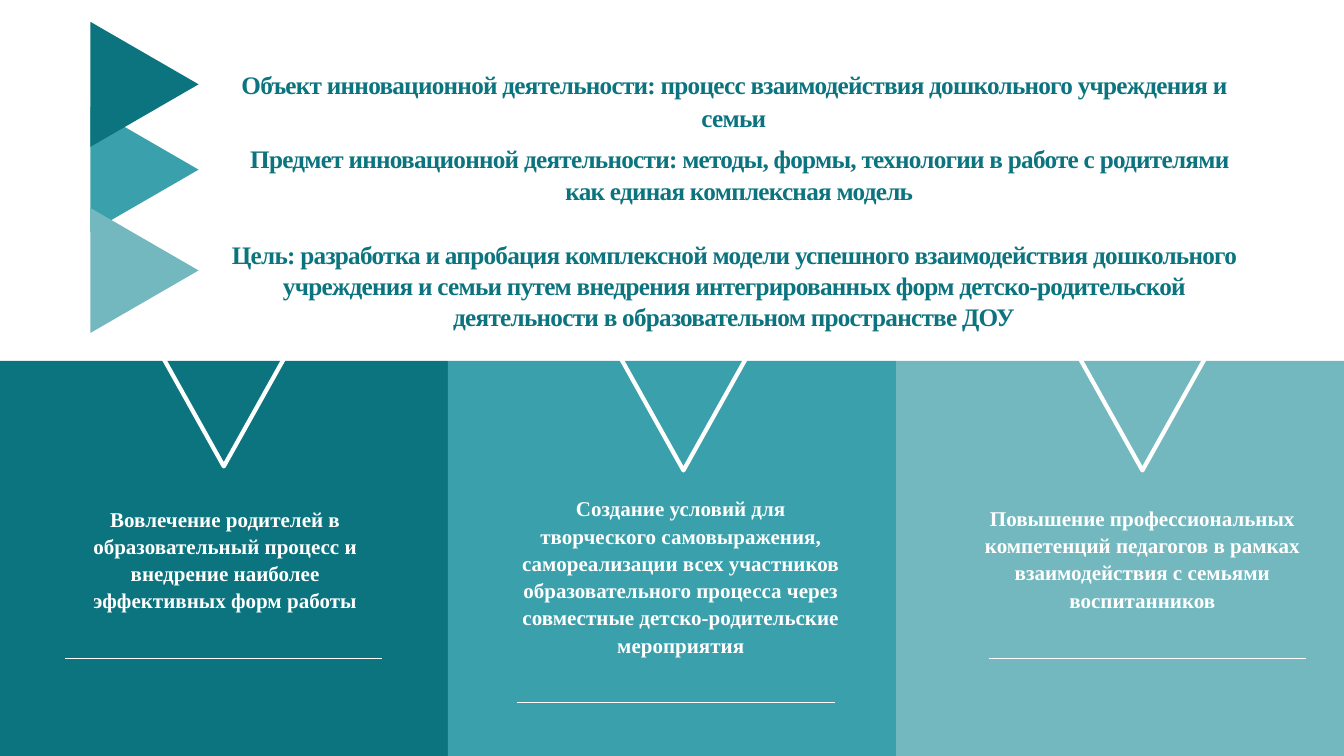
from pptx import Presentation, util as u
from pptx.dml.color import RGBColor
from pptx.enum import shapes, text
from pptx.oxml import parse_xml
from pptx.oxml.ns import nsdecls

W, H = 20, 11.25
DARK, MID, PALE, WHITE = "0B747F", "3AA0AB", "74B8BF", "FFFFFF"
COL = W / 3            # three equal columns
BAND = 5.37            # top of the coloured columns
TEXT_W = 4.72          # width of a task and its rule

# Content: statement, left, top, height, line spacing
STATEMENTS = [
    ("Объект инновационной деятельности: процесс взаимодействия дошкольного "
     "учреждения и семьи", 3.42, 1, 0.98, 35.1),
    ("Предмет инновационной деятельности: методы, формы, технологии в работе "
     "с родителями как единая комплексная модель", 3.5, 2.09, 0.98, 35.1),
    ("Цель: разработка и апробация комплексной модели успешного взаимодействия "
     "дошкольного учреждения и семьи путем внедрения интегрированных форм "
     "детско-родительской деятельности в образовательном пространстве ДОУ",
     3.42, 3.55, 1.39, 33.1),
]
# Task, colour, text box (left, top, height), rule (left, top), pointer (left, top)
TASKS = [
    ("Вовлечение родителей в образовательный процесс и внедрение наиболее "
     "эффективных форм работы",
     DARK, (0.99, 7.5, 1.62), (0.97, 9.79), (2.33, 5.15)),
    ("Создание условий для творческого самовыражения, самореализации всех "
     "участников образовательного процесса через совместные "
     "детско-родительские мероприятия",
     MID, (7.77, 7.35, 2.41), (7.7, 10.45), (9.17, 5.21)),
    ("Повышение профессиональных компетенций педагогов в рамках "
     "взаимодействия с семьями воспитанников",
     PALE, (14.64, 7.49, 1.63), (14.72, 9.79), (16, 5.21)),
]
# Arrows beside the statements, back to front: colour, top
ARROWS = [(MID, 1.72), (DARK, 0.45), (PALE, 3.22)]

STATEMENT = dict(size=u.Pt(27), bold=True, name="Times New Roman")
TASK = dict(STATEMENT, size=u.Pt(22.5))
FRAME = dict(word_wrap=True, auto_size=text.MSO_AUTO_SIZE.NONE,
             vertical_anchor=text.MSO_ANCHOR.TOP, margin_left=0,
             margin_right=0, margin_top=0, margin_bottom=0)


def rgb(color):
    return RGBColor.from_string(color)


def box(*lengths):
    return [u.Inches(v) for v in lengths]


def set_all(obj, values):
    for name, value in values.items():
        setattr(obj, name, value)


def add_shape(kind, place, fill=None, line=None, rotation=0):
    sp = s.shapes.add_shape(kind, *box(*place))
    sp.shadow.inherit = False
    sp.rotation = rotation
    if fill:
        sp.fill.solid()
        sp.fill.fore_color.rgb = rgb(fill)
    else:
        sp.fill.background()
    if line:
        sp.line.color.rgb = rgb(line)
        sp.line.width = u.Pt(4.5)
    else:
        sp.line.fill.background()


def add_rule(left, top):
    line = s.shapes.add_connector(shapes.MSO_CONNECTOR.STRAIGHT,
                                  *box(left, top, left + TEXT_W, top))
    line.line.color.rgb = rgb(WHITE)
    line.line.width = u.Pt(0.75)
    line._element.spPr.append(parse_xml(f"<a:effectLst {nsdecls('a')}/>"))


def write(sp, place, words, font, color, spacing, tracking=0):
    set_all(sp, dict(zip(("left", "top", "width", "height"), box(*place))))
    tf = sp.text_frame
    set_all(tf, FRAME)
    p = tf.paragraphs[0]
    set_all(p, dict(alignment=text.PP_ALIGN.CENTER, line_spacing=u.Pt(spacing),
                    space_before=u.Pt(0)))
    r = p.add_run()
    r.text = words
    set_all(r.font, font)
    r.font.color.rgb = rgb(color)
    if tracking:
        r._r.get_or_add_rPr().set("spc", str(round(tracking * 100)))


prs = Presentation()
prs.slide_width, prs.slide_height = box(W, H)
s = prs.slides.add_slide(prs.slide_layouts[5])

# Coloured columns with their rules, tasks and pointers
for i, (words, color, (left, top, height), rule, pointer) in enumerate(TASKS):
    add_shape(shapes.MSO_SHAPE.RECTANGLE, (i * COL, BAND, COL, H - BAND), color)
    add_rule(*rule)
    write(s.shapes.add_textbox(0, 0, 0, 0), (left, top, TEXT_W, height),
          words, TASK, WHITE, 29.2)
    add_shape(shapes.MSO_SHAPE.ISOSCELES_TRIANGLE, (*pointer, 2, 1.79),
              line=WHITE, rotation=180)

# Overlapping arrows
for color, top in ARROWS:
    add_shape(shapes.MSO_SHAPE.ISOSCELES_TRIANGLE, (1.22, top, 1.86, 1.61),
              color, rotation=90)

# Statements: the first one is the slide title
for i, (words, left, top, height, spacing) in enumerate(STATEMENTS):
    sp = s.shapes.add_textbox(0, 0, 0, 0) if i else s.shapes.title
    write(sp, (left, top, 15, height), words, STATEMENT, DARK, spacing, -0.8)

prs.save("out.pptx")
